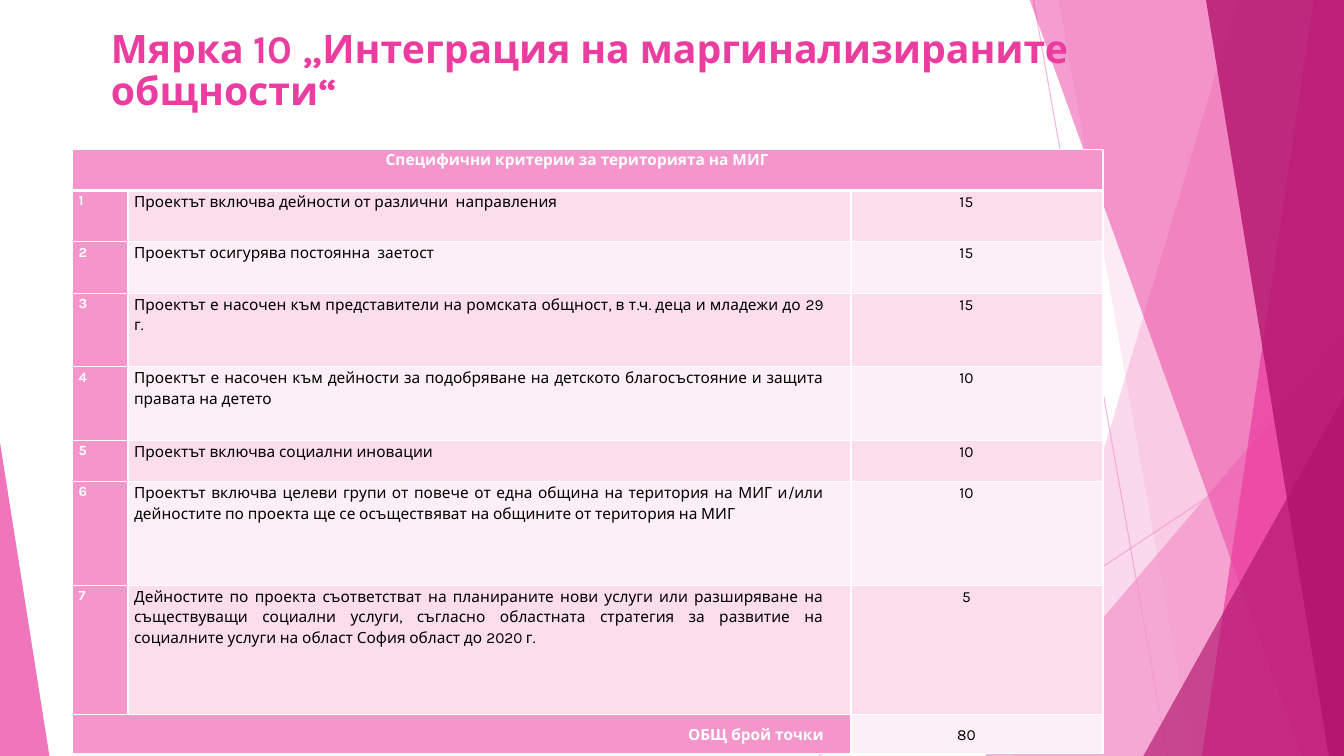
from lxml.etree import SubElement
from pptx import Presentation
from pptx.dml.color import RGBColor
from pptx.enum.shapes import MSO_CONNECTOR, MSO_SHAPE
from pptx.enum.text import MSO_ANCHOR, PP_ALIGN
from pptx.oxml.ns import qn
from pptx.util import Inches, Pt

FONT = "Karla"
HEX = {"light": "F496CB", "pink": "EB3D9F", "dark": "B2136D", "odd": "FBDDEC",
       "even": "FDEFF6", "white": "FFFFFF", "black": "000000"}
TITLE = "Мярка 10 „Интеграция на маргинализираните общности“"
HEAD = "Специфични критерии за територията на МИГ"
TOTAL = "ОБЩ брой точки"
CRITERIA = [  # text, points, row height
    ("Проектът включва дейности от различни  направления", 15, 0.51),
    ("Проектът осигурява постоянна  заетост", 15, 0.51),
    ("Проектът е насочен към представители на ромската общност, в т.ч. деца "
     "и младежи до 29 г.", 15, 0.73),
    ("Проектът е насочен към дейности за подобряване на детското "
     "благосъстояние и защита правата на детето", 10, 0.73),
    ("Проектът включва социални иновации", 10, 0.41),
    ("Проектът включва целеви групи от повече от една община на територия на "
     "МИГ и/или дейностите по проекта ще се осъществяват на общините от "
     "територия на МИГ", 10, 1.03),
    ("Дейностите по проекта съответстват на планираните нови услуги или "
     "разширяване на съществуващи социални услуги, съгласно областната "
     "стратегия за развитие на социалните услуги на област София област до "
     "2020 г.", 5, 1.28),
]
COLS = [0.55, 7.17, 2.5]
ROWS = [0.41] + [high for _, _, high in CRITERIA] + [0.39]
WIDE, TALL = 13.33, 7.5
RAYS = [(10.25, 0, 11.58, TALL), (WIDE, 4.03, 8.12, TALL)]
# bands: left edge at top and bottom; peaks: left, top, width, tip
FACETS = [
    ("band", (12.28, 10.04), "light", 36),
    ("band", (10.5, 11.83), "light", 20),
    ("peak", (9.77, 3.33, 3.56, 1), "light", 72),
    ("band", (10.21, 12.91), "pink", 50),
    ("band", (13.03, 11.92), "pink", 70),
    ("band", (11.96, 13.18), "dark", 80),
    ("peak", (11.34, 3.93, 1.99, 1), "dark", 66),
    ("peak", (0, 4.39, 0.49, 0), "pink", 70),
]


def rgb(name):
    return RGBColor.from_string(HEX[name])


def fade(part, share):
    """Set the opacity, in percent, of the solid colour inside part."""
    tone = next(part.iter(qn("a:srgbClr")))
    SubElement(tone, qn("a:alpha")).set("val", str(share * 1000))


def draw_ray(shapes, ends):
    ray = shapes.add_connector(MSO_CONNECTOR.STRAIGHT, *map(Inches, ends))
    ray.line.color.rgb = rgb("light")
    ray.line.width = Pt(0.75)
    props = ray._element.spPr
    fade(props, 70)
    SubElement(props, qn("a:effectLst"))


def draw_facet(shapes, kind, dims, tone, share):
    if kind == "band":
        top, low = dims
        pen = shapes.build_freeform(Inches(top), Inches(-0.01))
        pen.add_line_segments([(Inches(x), Inches(y)) for x, y in
                               [(WIDE, -0.01), (WIDE, TALL), (low, TALL)]])
        facet = pen.convert_to_shape()
    else:
        left, top, wide, tip = dims
        facet = shapes.add_shape(MSO_SHAPE.ISOSCELES_TRIANGLE,
                                 *map(Inches, (left, top, wide, TALL - top)))
        facet.adjustments[0] = tip
    facet.shadow.inherit = False
    facet.fill.solid()
    facet.fill.fore_color.rgb = rgb(tone)
    facet.line.fill.background()
    fade(facet._element.spPr, share)


def write(para, text, size, tone, bold):
    run = para.add_run()
    run.text = text
    font = run.font
    font.name, font.size, font.bold = FONT, Pt(size), bold
    font.color.rgb = rgb(tone)


def border(cell, low):
    """Draw white cell borders; low is the width of the bottom one."""
    props = cell._tc.get_or_add_tcPr()
    sides = [("a:lnL", 1), ("a:lnR", 1), ("a:lnT", 1), ("a:lnB", low)]
    for spot, (tag, width) in enumerate(sides):
        line = SubElement(props, qn(tag), w=str(Pt(width)))
        fill = SubElement(line, qn("a:solidFill"))
        SubElement(fill, qn("a:srgbClr"), val=HEX["white"])
        props.insert(spot, line)


def fill_cell(cell, text, back, align, size=11, strong=False):
    cell.fill.solid()
    cell.fill.fore_color.rgb = rgb(back)
    cell.margin_left, cell.margin_right = Inches(0.06), Inches(0.27)
    cell.margin_top = cell.margin_bottom = 0
    para = cell.text_frame.paragraphs[0]
    para.alignment, para.line_spacing = align, 1.15
    write(para, text, size, "white" if strong else "black", strong)


def draw_table(shapes):
    box = map(Inches, (0.72, 1.48, sum(COLS), sum(ROWS)))
    table = shapes.add_table(len(ROWS), len(COLS), *box).table
    for col, wide in zip(table.columns, COLS):
        col.width = Inches(wide)
    for row, high in zip(table.rows, ROWS):
        row.height = Inches(high)
    last = len(ROWS) - 1
    table.cell(0, 0).merge(table.cell(0, 2))
    table.cell(last, 0).merge(table.cell(last, 1))

    fill_cell(table.cell(0, 0), HEAD, "light", PP_ALIGN.CENTER, strong=True)
    for num, (text, score, _) in enumerate(CRITERIA, 1):
        back = "odd" if num % 2 else "even"
        fill_cell(table.cell(num, 0), str(num), "light", PP_ALIGN.JUSTIFY,
                  size=10, strong=True)
        fill_cell(table.cell(num, 1), text, back, PP_ALIGN.JUSTIFY)
        fill_cell(table.cell(num, 2), str(score), back, PP_ALIGN.CENTER)
    total = sum(score for _, score, _ in CRITERIA)
    fill_cell(table.cell(last, 0), TOTAL, "light", PP_ALIGN.RIGHT, strong=True)
    fill_cell(table.cell(last, 2), str(total), "even", PP_ALIGN.CENTER)
    for col in (0, 2):
        table.cell(last, col).vertical_anchor = MSO_ANCHOR.MIDDLE
    for num in range(len(ROWS)):
        for col in range(len(COLS)):
            border(table.cell(num, col), 1 if num else 3)


def place_title(title):
    title.left, title.top, title.width, title.height = map(
        Inches, (1, 0.24, 9.92, 1.19))
    frame = title.text_frame
    frame.word_wrap = True
    frame.vertical_anchor = MSO_ANCHOR.TOP
    para = frame.paragraphs[0]
    para.alignment, para.line_spacing = PP_ALIGN.LEFT, 0.9
    write(para, TITLE, 28, "pink", True)


def main():
    deck = Presentation()
    deck.slide_width, deck.slide_height = Inches(WIDE), Inches(TALL)
    shapes = deck.slides.add_slide(deck.slide_layouts[5]).shapes
    for ends in RAYS:
        draw_ray(shapes, ends)
    for facet in FACETS:
        draw_facet(shapes, *facet)
    place_title(shapes.title)
    shapes._spTree.append(shapes.title._element)  # in front of the facets
    draw_table(shapes)
    deck.save("out.pptx")


if __name__ == "__main__":
    main()
